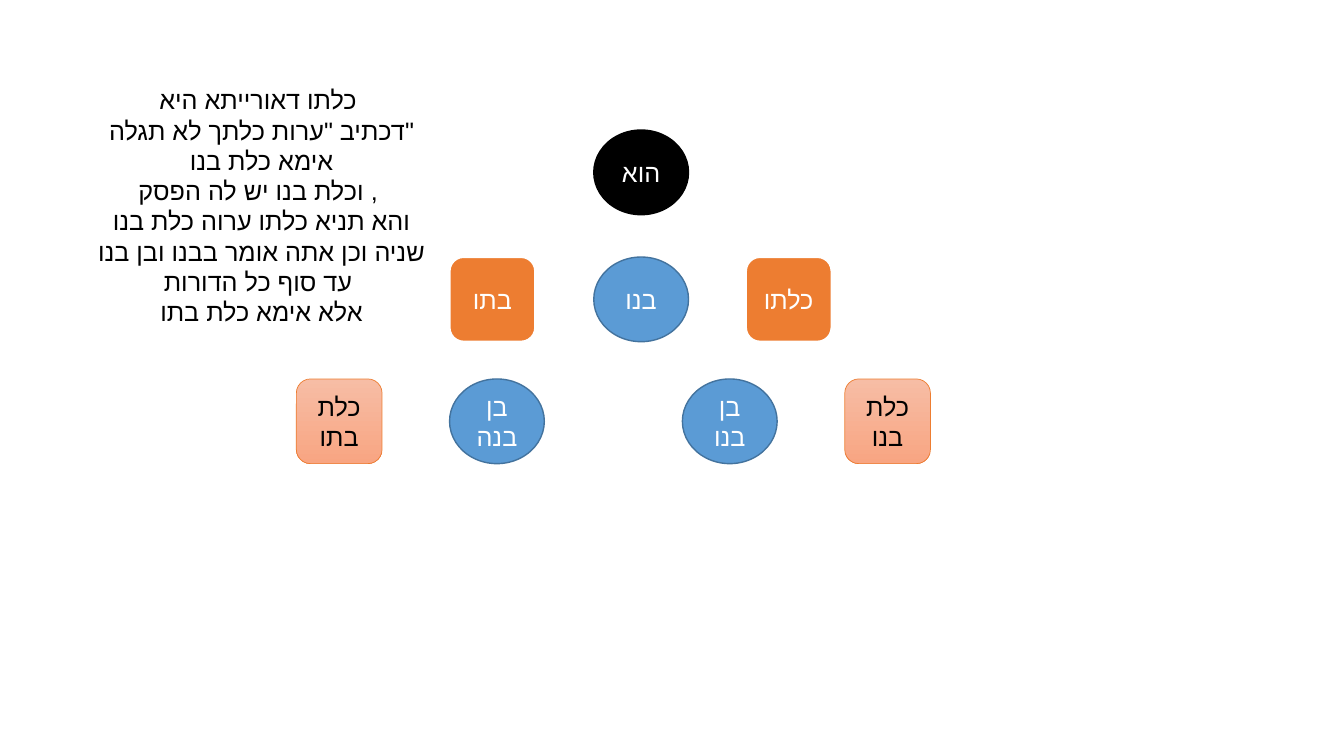
from dataclasses import dataclass

from lxml.etree import SubElement
from pptx import Presentation
from pptx.dml.color import RGBColor as Rgb
from pptx.enum.shapes import MSO_SHAPE as Shape
from pptx.enum.text import MSO_ANCHOR as Anchor, MSO_AUTO_SIZE as AutoSize, PP_ALIGN as Align
from pptx.oxml.ns import qn
from pptx.util import Pt


@dataclass(frozen=True)
class Theme:
    font: str = "Arial"
    text_size: float = 18
    black: str = "000000"
    white: str = "FFFFFF"
    blue: str = "5B9BD5"
    blue_edge: str = "43739E"
    orange: str = "ED7D31"
    peach_top: str = "F7BDA5"
    peach_bottom: str = "F8A582"


class FamilyTree:
    oval_width = 67.7
    card_width = 61.2
    height = 60.5

    def __init__(self, slide, theme):
        self.slide = slide
        self.theme = theme

    def fill_text(self, frame, lines, color):
        frame.word_wrap = True
        for index, line in enumerate(lines):
            para = frame.paragraphs[0] if index == 0 else frame.add_paragraph()
            para.text = line
            para.alignment = Align.CENTER
            font = para.font
            font.name = self.theme.font
            font.size = Pt(self.theme.text_size)
            font.color.rgb = Rgb.from_string(color)
            SubElement(font._element, qn("a:cs")).set("typeface", self.theme.font)

    def person(self, kind, center, top, width, label, fills, edge, edge_width, color):
        box = self.slide.shapes.add_shape(
            kind, Pt(center - width / 2), Pt(top), Pt(width), Pt(self.height))
        box.shadow.inherit = False
        if len(fills) == 1:
            box.fill.solid()
            box.fill.fore_color.rgb = Rgb.from_string(fills[0])
        else:
            box.fill.gradient()
            box.fill.gradient_angle = 270
            for stop, fill in zip(box.fill.gradient_stops, fills):
                stop.color.rgb = Rgb.from_string(fill)
        box.line.color.rgb = Rgb.from_string(edge)
        box.line.width = Pt(edge_width)
        box.text_frame.vertical_anchor = Anchor.MIDDLE
        self.fill_text(box.text_frame, [label], color)

    def man(self, center, top, label, fill, edge):
        self.person(Shape.OVAL, center, top, self.oval_width, label,
                    [fill], edge, 1, self.theme.white)

    def woman(self, center, top, label):
        self.person(Shape.ROUNDED_RECTANGLE, center, top, self.card_width, label,
                    [self.theme.orange], self.theme.white, 1.5, self.theme.white)

    def in_law(self, center, top, label):
        self.person(Shape.ROUNDED_RECTANGLE, center, top, self.card_width, label,
                    [self.theme.peach_top, self.theme.peach_bottom],
                    self.theme.orange, 0.5, self.theme.black)

    def passage(self, left, top, width, height, lines):
        box = self.slide.shapes.add_textbox(Pt(left), Pt(top), Pt(width), Pt(height))
        self.fill_text(box.text_frame, lines, self.theme.black)
        box.text_frame.auto_size = AutoSize.SHAPE_TO_FIT_TEXT


def main():
    deck = Presentation()
    deck.slide_width, deck.slide_height = Pt(960), Pt(540)
    theme = Theme()
    tree = FamilyTree(deck.slides.add_slide(deck.slide_layouts[6]), theme)
    self_row, child_row, grandchild_row = 92.9, 183.6, 270.7

    tree.man(458, self_row, "הוא", theme.black, theme.black)
    for center, top, label in [
        (458, child_row, "בנו"),
        (521.3, grandchild_row, "בן בנו"),
        (355, grandchild_row, "בן בנה"),
    ]:
        tree.man(center, top, label, theme.blue, theme.blue_edge)
    for center, label in [(563.4, "כלתו"), (351.7, "בתו")]:
        tree.woman(center, child_row, label)
    for center, label in [(634, "כלת בנו"), (242.3, "כלת בתו")]:
        tree.in_law(center, grandchild_row, label)

    tree.passage(53.3, 56.9, 267.1, 181.4, [
        "כלתו דאורייתא היא ",
        "דכתיב \"ערות כלתך לא תגלה\"",
        "אימא כלת בנו",
        "וכלת בנו יש לה הפסק , ",
        "והא תניא כלתו ערוה כלת בנו שניה וכן אתה אומר בבנו ובן בנו עד סוף כל הדורות ",
        "אלא אימא כלת בתו",
    ])
    deck.save("out.pptx")


if __name__ == "__main__":
    main()
